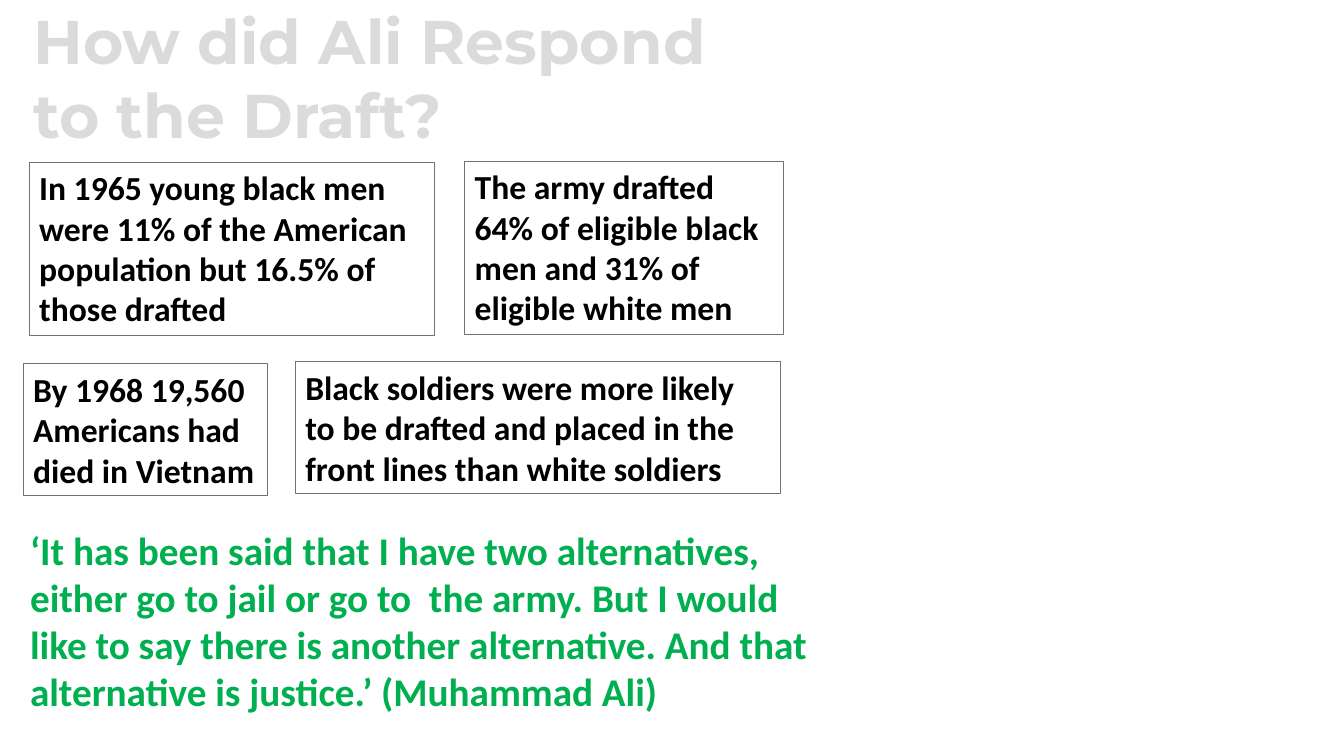
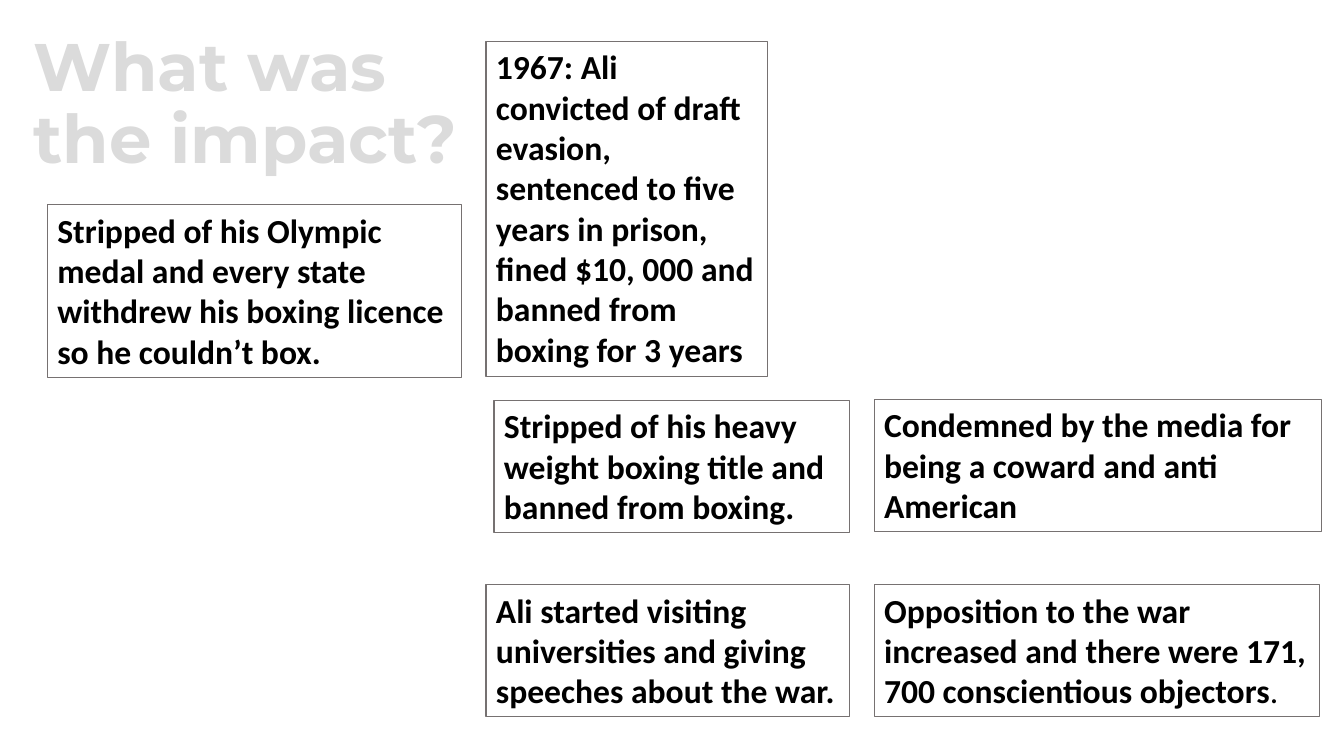
from dataclasses import dataclass

from lxml import etree
from pptx import Presentation
from pptx.dml.color import RGBColor
from pptx.enum import dml, shapes, text
from pptx.oxml import ns
from pptx.util import Inches, Pt

BLACK, GREEN, EDGE = "000000", "00B050", "767171"
PALE, GREY, DARK = "DBDBDB", "A5A5A5", "525252"
BODY, HEAD = "Calibri", "Montserrat"
TALL, ROW, FOUR = 3.33, 1.31, 1.72


@dataclass(frozen=True)
class Area:
    left: float
    top: float
    width: float
    height: float

    def place(self) -> tuple:
        return tuple(map(Inches, (self.left, self.top, self.width, self.height)))


@dataclass(frozen=True)
class Note:
    area: Area
    words: str
    tail: str = ""


@dataclass(frozen=True)
class Title:
    area: Area
    lines: tuple
    size: int
    space: float
    anchor: text.MSO_ANCHOR


@dataclass(frozen=True)
class Page:
    title: Title
    notes: tuple
    quote: Note | None = None


PAGES = (
    Page(
        Title(Area(0.23, -0.02, 12.89, 1.58),
              ("How did Ali Respond", "to the Draft?"),
              44, 1.0, text.MSO_ANCHOR.TOP),
        (
            Note(Area(0.29, 1.61, 4.02, FOUR),
                 "In 1965 young black men were 11% of the American population "
                 "but 16.5% of those drafted"),
            Note(Area(4.61, 1.6, 3.16, FOUR),
                 "The army drafted 64% of eligible black men and 31% of "
                 "eligible white men"),
            Note(Area(0.23, 3.61, 2.42, ROW),
                 "By 1968 19,560 Americans had died in Vietnam"),
            Note(Area(2.93, 3.59, 4.81, ROW),
                 "Black soldiers were more likely to be drafted and placed in "
                 "the front lines than white soldiers"),
        ),
        Note(Area(0.2, 5.17, 8.22, 1.99),
             "‘It has been said that I have two alternatives, either go to "
             "jail or go to  the army. But I would like to say there is "
             "another alternative. And that alternative is justice.’ "
             "(Muhammad Ali)"),
    ),
    Page(
        Title(Area(0.23, 0.27, 4.6, 1.56), ("What was the impact?",),
              48, 0.9, text.MSO_ANCHOR.MIDDLE),
        (
            Note(Area(0.47, 2.03, 4.11, FOUR),
                 "Stripped of his Olympic medal and every state withdrew his "
                 "boxing licence so he couldn’t box."),
            Note(Area(4.82, 0.41, 2.79, TALL),
                 "1967: Ali convicted of draft evasion, sentenced to five "
                 "years in prison, fined $10, 000 and banned from boxing for "
                 "3 years"),
            Note(Area(4.9, 3.97, 3.53, ROW),
                 "Stripped of his heavy weight boxing title and banned from "
                 "boxing."),
            Note(Area(8.67, 3.96, 4.44, ROW),
                 "Condemned by the media for being a coward and anti American"),
            Note(Area(4.82, 5.8, 3.61, ROW),
                 "Ali started visiting universities and giving speeches about "
                 "the war."),
            Note(Area(8.67, 5.8, 4.42, ROW),
                 "Opposition to the war increased and there were 171, 700 "
                 "conscientious objectors", "."),
        ),
    ),
)


def paint(code: str) -> RGBColor:
    return RGBColor.from_string(code)


def setup(frame, anchor=text.MSO_ANCHOR.TOP) -> None:
    frame.word_wrap = True
    frame.auto_size = text.MSO_AUTO_SIZE.SHAPE_TO_FIT_TEXT
    frame.vertical_anchor = anchor


def write(para, words: str, face: str, size: int, bold: bool = True):
    para.alignment = text.PP_ALIGN.LEFT
    run = para.add_run()
    run.text = words
    run.font.name = face
    run.font.size = Pt(size)
    run.font.bold = bold
    return run


def stripe(run) -> None:
    fill = run.font.fill
    fill.patterned()
    fill.pattern = dml.MSO_PATTERN.NARROW_HORIZONTAL
    fill.fore_color.rgb = paint(GREY)
    fill.back_color.rgb = paint(PALE)
    line = etree.Element(ns.qn("a:ln"), w=str(Pt(1)))
    solid = etree.SubElement(line, ns.qn("a:solidFill"))
    etree.SubElement(solid, ns.qn("a:srgbClr"), val=DARK)
    run._r.get_or_add_rPr().insert(0, line)


def head(slide, title: Title) -> None:
    shape = slide.shapes.title
    shape.left, shape.top, shape.width, shape.height = title.area.place()
    frame = shape.text_frame
    setup(frame, title.anchor)
    for index, line in enumerate(title.lines):
        para = frame.add_paragraph() if index else frame.paragraphs[0]
        para.line_spacing = title.space
        stripe(write(para, line, HEAD, title.size))


def fill(frame, note: Note, size: int, code: str) -> None:
    setup(frame)
    para = frame.paragraphs[0]
    for words, bold in ((note.words, True), (note.tail, False)):
        if words:
            run = write(para, words, BODY, size, bold)
            run.font.color.rgb = paint(code)


def box(slide, note: Note) -> None:
    shape = slide.shapes.add_shape(
        shapes.MSO_SHAPE.RECTANGLE, *note.area.place())
    shape.shadow.inherit = False
    shape.fill.background()
    shape.line.color.rgb = paint(EDGE)
    shape.line.width = Pt(0.75)
    fill(shape.text_frame, note, 24, BLACK)


def main() -> None:
    deck = Presentation()
    deck.slide_width, deck.slide_height = Inches(13.33), Inches(7.5)
    for page in PAGES:
        slide = deck.slides.add_slide(deck.slide_layouts.get_by_name("Title Only"))
        head(slide, page.title)
        for note in page.notes:
            box(slide, note)
        if page.quote:
            plain = slide.shapes.add_textbox(*page.quote.area.place())
            fill(plain.text_frame, page.quote, 28, GREEN)
    deck.save("out.pptx")


if __name__ == "__main__":
    main()
